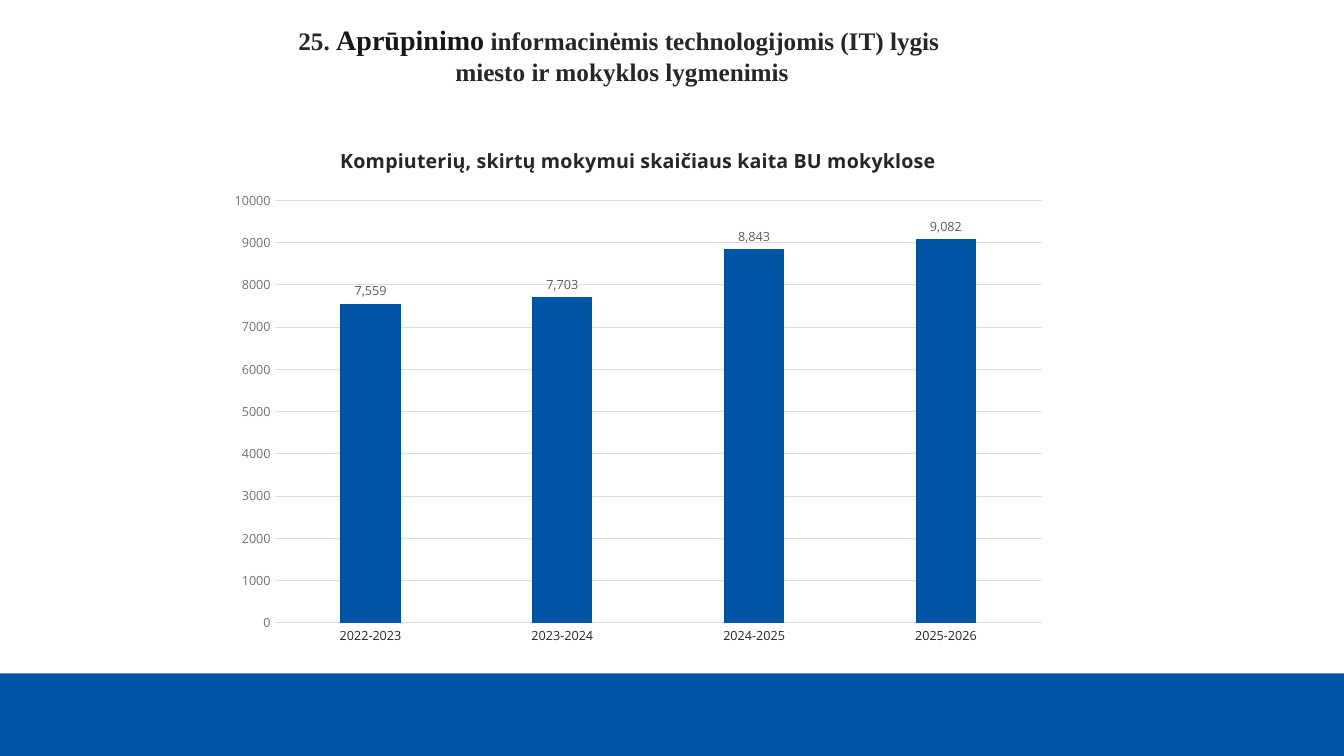
from pptx import Presentation
from pptx.chart.data import CategoryChartData
from pptx.dml.color import RGBColor
from pptx.enum.chart import XL_CHART_TYPE, XL_LABEL_POSITION, XL_TICK_MARK
from pptx.enum.shapes import MSO_SHAPE
from pptx.enum.text import MSO_ANCHOR, PP_ALIGN
from pptx.util import Inches, Pt

# Content
BLUE = RGBColor(0x00, 0x54, 0xA5)
DARK = RGBColor(0x26, 0x26, 0x26)
INK = RGBColor(0x18, 0x17, 0x17)
AXIS_GREY = RGBColor(0x72, 0x72, 0x72)
LABEL_GREY = RGBColor(0x5C, 0x5C, 0x5C)
GRID_GREY = RGBColor(0xDE, 0xDE, 0xDE)
HEADING_FONT, CHART_FONT = "Times New Roman", "Open Sans"

HEADING = [
    [("25. ", 18, DARK), ("Aprūpinimo", 20, INK),
     (" informacinėmis technologijomis (IT) lygis ", 18, DARK)],
    [("miesto ir mokyklos lygmenimis", 18, DARK)],
]
CHART_TITLE = "Kompiuterių, skirtų mokymui skaičiaus kaita BU mokyklose"
COMPUTERS = {"2022-2023": 7559, "2023-2024": 7703,
             "2024-2025": 8843, "2025-2026": 9082}


def style(font, name, size, color, bold=False):
    font.name, font.size, font.bold = name, Pt(size), bold
    font.color.rgb = color


def grey_line(line):
    line.color.rgb = GRID_GREY
    line.width = Pt(0.75)


deck = Presentation()
deck.slide_width, deck.slide_height = Inches(13.33), Inches(7.5)
page = deck.slides.add_slide(deck.slide_layouts[6])

# Bottom band
band_top = Inches(6.68)
band = page.shapes.add_shape(MSO_SHAPE.RECTANGLE, 0, band_top,
                             deck.slide_width, deck.slide_height - band_top)
band.shadow.inherit = False
band.fill.solid()
band.fill.fore_color.rgb = BLUE
band.line.fill.background()

# Column chart
data = CategoryChartData(number_format="#,##0")
data.categories = list(COMPUTERS)
data.add_series(CHART_TITLE, list(COMPUTERS.values()))
chart = page.shapes.add_chart(
    XL_CHART_TYPE.COLUMN_CLUSTERED, Inches(2.16), Inches(1.25),
    Inches(8.34), Inches(5.25), data).chart
style(chart.font, CHART_FONT, 10, DARK)
chart.has_legend = False
chart.has_title = True
title = chart.chart_title
title.include_in_layout = False
title.text_frame.text = CHART_TITLE
style(title.text_frame.paragraphs[0].runs[0].font, CHART_FONT, 14, DARK, True)

# Columns and their labels
plot = chart.plots[0]
plot.gap_width, plot.overlap, plot.vary_by_categories = 219, -27, False
series = plot.series[0]
series.format.fill.solid()
series.format.fill.fore_color.rgb = BLUE
labels = series.data_labels
labels.show_value = True
labels.position = XL_LABEL_POSITION.OUTSIDE_END
labels.number_format, labels.number_format_is_linked = "#,##0", False
style(labels.font, CHART_FONT, 9, LABEL_GREY)

# Axes
years, counts = chart.category_axis, chart.value_axis
for axis, color in ((years, DARK), (counts, AXIS_GREY)):
    axis.major_tick_mark = axis.minor_tick_mark = XL_TICK_MARK.NONE
    style(axis.tick_labels.font, CHART_FONT, 9, color)
grey_line(years.format.line)
counts.minimum_scale, counts.maximum_scale, counts.major_unit = 0, 10000, 1000
counts.tick_labels.number_format = "0"
counts.tick_labels.number_format_is_linked = False
counts.format.line.fill.background()
counts.has_major_gridlines = True
grey_line(counts.major_gridlines.format.line)

# Heading
box = page.shapes.add_textbox(Inches(1.37), Inches(0.17), Inches(9.6), Inches(0.74))
frame = box.text_frame
frame.word_wrap = True
frame.vertical_anchor = MSO_ANCHOR.MIDDLE
for index, spans in enumerate(HEADING):
    para = frame.add_paragraph() if index else frame.paragraphs[0]
    para.alignment = PP_ALIGN.CENTER
    for text, size, color in spans:
        span = para.add_run()
        span.text = text
        style(span.font, HEADING_FONT, size, color, True)

deck.save("out.pptx")
